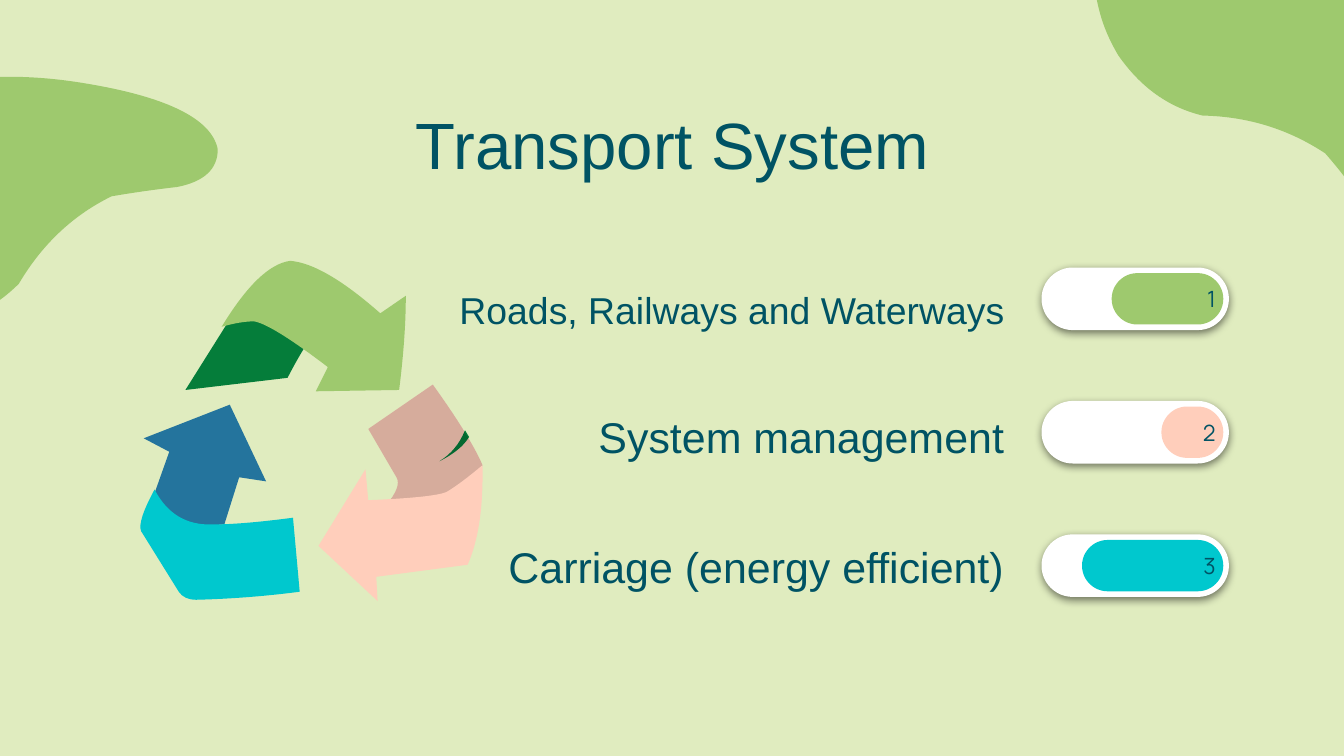
"""Build the Transport System slide: a recycling symbol beside three labelled sliders.

Outlines are in hundredths of an inch: straight between corners, curved towards each bend.
"""
from collections import namedtuple

from lxml import etree
from pptx import Presentation, util as u
from pptx.dml.color import RGBColor
from pptx.enum import shapes, text
from pptx.oxml import ns

CREAM = RGBColor(0xE0, 0xEC, 0xBF)
GREEN = RGBColor(0x9E, 0xC9, 0x6E)
DARK_GREEN = RGBColor(0x05, 0x7D, 0x3A)
TEAL = RGBColor(0x00, 0x53, 0x64)
BLUE = RGBColor(0x24, 0x74, 0x9D)
CYAN = RGBColor(0x00, 0xC8, 0xCE)
PINK = RGBColor(0xFF, 0xCE, 0xBB)
WHITE = RGBColor(0xFF, 0xFF, 0xFF)
BLACK = RGBColor(0x00, 0x00, 0x00)

Corner = namedtuple("Corner", "x y")
Bend = namedtuple("Bend", "x y")
OUTLINE_UNIT = u.Cm(2.54) / 100

RIGHT_BLOB = [
    Corner(886, -103), Bend(830, -97), Corner(818, -45), Bend(811, -18),
    Corner(818, 8), Bend(822, 24), Corner(832, 41), Bend(857, 77),
    Corner(895, 86), Bend(945, 87), Corner(986, 114), Bend(1001, 131),
    Corner(1016, 153), Bend(1037, 175), Corner(1054, 164), Bend(1077, 141),
    Corner(1063, 96), Bend(1040, 4), Corner(970, -64), Bend(930, -105)]
LEFT_BLOB = [
    Corner(-78, 70), Bend(-16, 50), Corner(57, 61), Bend(155, 76),
    Corner(162, 111), Bend(162, 133), Corner(132, 139), Bend(106, 142),
    Corner(83, 146), Bend(40, 167), Corner(14, 211), Bend(-16, 241),
    Corner(-57, 242), Bend(-105, 245), Corner(-139, 212), Bend(-182, 170),
    Corner(-154, 124), Bend(-132, 87)]
BLUE_HEAD = [
    Corner(171, 301), Corner(107, 326), Corner(126, 336), Corner(105, 395),
    Corner(167, 390), Corner(178, 355), Corner(198, 358)]
CYAN_TAIL = [
    Corner(115, 364), Bend(102, 388), Corner(105, 395), Corner(133, 440),
    Bend(137, 446), Corner(146, 446), Bend(185, 445), Corner(223, 440),
    Corner(218, 385), Bend(180, 390), Corner(158, 390), Bend(129, 391)]
GREEN_TAIL = [
    Corner(177, 228), Corner(138, 290), Corner(214, 281), Bend(231, 248), Corner(242, 239)]
GREEN_HEAD = [
    Corner(165, 243), Bend(193, 197), Corner(216, 194), Bend(241, 196),
    Corner(283, 233), Corner(302, 220), Bend(302, 250), Corner(297, 290),
    Corner(235, 291), Corner(244, 273), Bend(202, 241), Corner(189, 239), Bend(179, 239)]
PINK_TAIL = [
    Corner(322, 286), Corner(274, 319), Corner(295, 355), Bend(299, 362),
    Corner(287, 376), Corner(343, 387), Corner(359, 346), Bend(350, 325)]
PINK_CREASE = [
    Corner(346, 320), Bend(340, 335), Corner(327, 343), Bend(343, 335), Corner(349, 325)]
PINK_HEAD = [
    Corner(359, 346), Bend(341, 361), Corner(332, 366), Bend(322, 370),
    Corner(274, 372), Corner(272, 349), Corner(237, 406), Corner(281, 447),
    Corner(280, 429), Corner(348, 420), Bend(360, 393)]

BACK_TO_FRONT = [
    (RIGHT_BLOB, GREEN, 100), (LEFT_BLOB, GREEN, 100),
    (BLUE_HEAD, BLUE, 100), (CYAN_TAIL, CYAN, 100),
    (GREEN_TAIL, DARK_GREEN, 100), (GREEN_HEAD, GREEN, 100),
    (PINK_TAIL, PINK, 100), (PINK_CREASE, DARK_GREEN, 100),
    (PINK_TAIL, BLACK, 16), (PINK_HEAD, PINK, 100)]

SLIDERS = [
    ("Roads, Railways and Waterways", 20, 1.15, 11.25, 2.11, GREEN),
    ("System management", 23, 1, 9.3, 1.17, PINK),
    ("Carriage (energy efficient)", 23, 1, 10.74, 2.67, CYAN)]
LABEL_RIGHT, LABEL_TOP, LABEL_PITCH, LABEL_HEIGHT = 19.24, 5.02, 2.46, 1.52
PILL_RIGHT, PILL_TOP, PILL_PITCH, PILL_HEIGHT = 23.12, 5.16, 2.52, 0.97
TRACK_WIDTH = 3.33


def write(shape, words, size, font, alignment, side_inset):
    frame = shape.text_frame
    frame.text = words
    frame.word_wrap = True
    frame.auto_size = text.MSO_AUTO_SIZE.NONE
    frame.vertical_anchor = text.MSO_ANCHOR.MIDDLE
    frame.margin_left = frame.margin_right = u.Cm(side_inset)
    frame.margin_top = frame.margin_bottom = u.Cm(0.25)
    paragraph = frame.paragraphs[0]
    paragraph.alignment = alignment
    paragraph.space_before = u.Pt(0)
    paragraph.font.name = font
    paragraph.font.size = u.Pt(size)
    paragraph.font.bold = False
    paragraph.font.color.rgb = TEAL
    return paragraph


def paint(shape, color):
    shape.shadow.inherit = False
    shape.line.fill.background()
    shape.fill.solid()
    shape.fill.fore_color.rgb = color


presentation = Presentation()
presentation.slide_width = u.Cm(25.4)
presentation.slide_height = u.Cm(14.28)
slide = presentation.slides.add_slide(presentation.slide_layouts.get_by_name("Comparison"))
slide.background.fill.solid()
slide.background.fill.fore_color.rgb = CREAM
title, *labels, spare = slide.placeholders
spare.element.getparent().remove(spare.element)

title.left, title.top, title.width, title.height = u.Cm(2.29), u.Cm(1.9), u.Cm(20.85), u.Cm(1.6)
write(title, "Transport System", 35, "Arial", text.PP_ALIGN.CENTER, 0.25)

for outline, color, opacity in BACK_TO_FRONT:
    start, *others = outline
    points = [*others, start]
    builder = slide.shapes.build_freeform(*start, scale=OUTLINE_UNIT)
    builder.add_line_segments(points, close=True)
    piece = builder.convert_to_shape()
    paint(piece, color)
    if opacity < 100:
        fill_color = piece.element.spPr.find(ns.qn("a:solidFill"))[0]
        etree.SubElement(fill_color, ns.qn("a:alpha"), val=str(opacity * 1000))
    lines = list(piece.element.iter(ns.qn("a:lnTo")))
    for point, line, next_line in zip(points, lines, lines[1:]):
        if isinstance(point, Bend):
            line.tag = ns.qn("a:quadBezTo")
            line.append(next_line[0])
            next_line.getparent().remove(next_line)

for row, (words, size, spacing, label_width, bar_width, color) in enumerate(SLIDERS):
    label = labels[row]
    label.left, label.top = u.Cm(LABEL_RIGHT - label_width), u.Cm(LABEL_TOP + LABEL_PITCH * row)
    label.width, label.height = u.Cm(label_width), u.Cm(LABEL_HEIGHT)
    paragraph = write(label, words, size, "Arial", text.PP_ALIGN.RIGHT, 0.25)
    paragraph.line_spacing = spacing
    properties = paragraph._p.get_or_add_pPr()
    properties.set("marL", "0")
    properties.set("indent", "0")
    no_bullet = etree.SubElement(properties, ns.qn("a:buNone"))
    properties.insert_element_before(no_bullet, "a:defRPr")

    pills = []
    for width, pill_color in ((TRACK_WIDTH, WHITE), (bar_width, color)):
        pill = slide.shapes.add_shape(
            shapes.MSO_SHAPE.ROUNDED_RECTANGLE, u.Cm(PILL_RIGHT - width),
            u.Cm(PILL_TOP + PILL_PITCH * row), u.Cm(width), u.Cm(PILL_HEIGHT))
        pill.adjustments[0] = 0.5
        paint(pill, pill_color)
        pills.append(pill)
    track, bar = pills
    write(bar, str(row + 1), 12, "Manrope", text.PP_ALIGN.RIGHT, 0)

    track.line.color.rgb = WHITE
    track.line.width = u.Pt(6)
    effects = track.element.spPr.find(ns.qn("a:effectLst"))
    shadow = etree.SubElement(
        effects, ns.qn("a:outerShdw"), blurRad=str(u.Pt(4.5)), dist=str(u.Pt(1.5)),
        dir="5400000", algn="bl", rotWithShape="0")
    shadow_color = etree.SubElement(shadow, ns.qn("a:srgbClr"), val=str(BLACK))
    etree.SubElement(shadow_color, ns.qn("a:alpha"), val="50000")

presentation.save("out.pptx")
